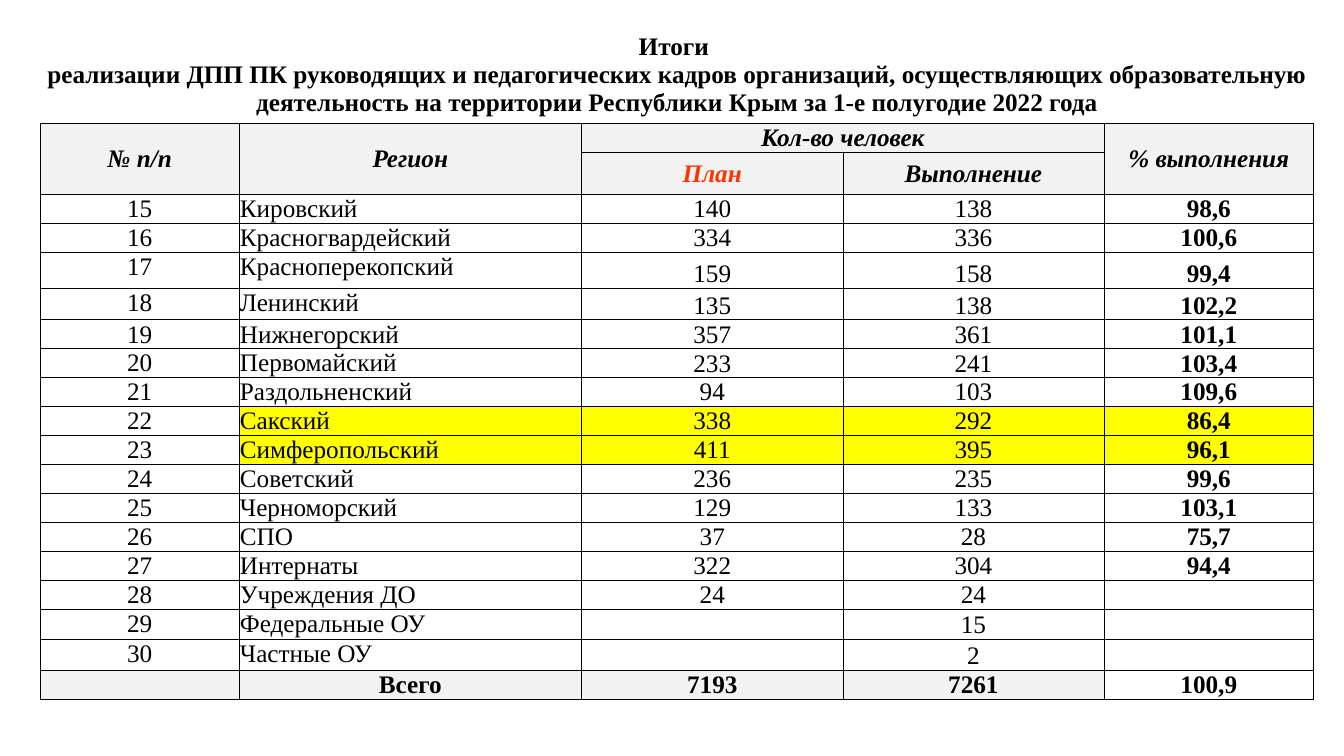
"""Build the slide with the table of training results by region."""
from lxml.etree import SubElement
from pptx import Presentation
from pptx.dml.color import RGBColor
from pptx.enum.text import MSO_ANCHOR, PP_ALIGN
from pptx.oxml.ns import qn
from pptx.util import Inches, Pt

FONT = "Times New Roman"
BLACK, RED, GREY, YELLOW = "000000", "FF3300", "F2F2F2", "FFFF00"
TITLE = (
    "Итоги \vреализации ДПП ПК руководящих и педагогических кадров организаций, "
    "осуществляющих образовательную деятельность на территории Республики Крым "
    "за 1-е полугодие 2022 года"
)
HEADER = [
    ("№ п/п", "Регион", "Кол-во человек", "", "% выполнения"),
    ("", "", "План", "Выполнение", ""),
]
REGIONS = [
    ("Кировский", "140", "138", "98,6"),
    ("Красногвардейский", "334", "336", "100,6"),
    ("Красноперекопский", "159", "158", "99,4"),
    ("Ленинский", "135", "138", "102,2"),
    ("Нижнегорский", "357", "361", "101,1"),
    ("Первомайский", "233", "241", "103,4"),
    ("Раздольненский", "94", "103", "109,6"),
    ("Сакский", "338", "292", "86,4"),
    ("Симферопольский", "411", "395", "96,1"),
    ("Советский", "236", "235", "99,6"),
    ("Черноморский", "129", "133", "103,1"),
    ("СПО", "37", "28", "75,7"),
    ("Интернаты", "322", "304", "94,4"),
    ("Учреждения ДО", "24", "24", ""),
    ("Федеральные ОУ", "", "15", ""),
    ("Частные ОУ", "", "2", ""),
]
TOTAL = ("", "Всего", "7193", "7261", "100,9")
HIGHLIGHTED = ("Сакский", "Симферопольский")
FIRST_NUMBER = 15
COLUMN_WIDTHS = [1.97, 3.4, 2.59, 2.59, 2.08]
ROW_HEIGHT = 0.28
TALL_ROWS = {0: 0.96, 2: 0.42, 5: 0.36, 6: 0.31, 17: 0.3, 18: 0.31}


def color(value):
    return RGBColor.from_string(value)


def set_borders(cell, visible):
    properties = cell._tc.get_or_add_tcPr()
    for side in ("L", "R", "T", "B"):
        line = SubElement(properties, qn(f"a:ln{side}"), w=str(Pt(0.5)))
        if side in visible:
            fill = SubElement(line, qn("a:solidFill"))
            SubElement(fill, qn("a:srgbClr"), val=BLACK)
        else:
            SubElement(line, qn("a:noFill"))


deck = Presentation()
deck.slide_width, deck.slide_height = Inches(13.33), Inches(7.5)
page = deck.slides.add_slide(deck.slide_layouts[6])

rows = [(TITLE, "", "", "", ""), *HEADER]
rows += [(str(number), *region) for number, region in enumerate(REGIONS, FIRST_NUMBER)]
rows.append(TOTAL)
last_row, last_column = len(rows) - 1, len(COLUMN_WIDTHS) - 1
heights = [TALL_ROWS.get(index, ROW_HEIGHT) for index in range(len(rows))]

table = page.shapes.add_table(
    len(rows), len(COLUMN_WIDTHS), Inches(0.4), Inches(0.26),
    Inches(sum(COLUMN_WIDTHS)), Inches(sum(heights)),
).table
table.first_row = table.horz_banding = False
for column, width in zip(table.columns, COLUMN_WIDTHS):
    column.width = Inches(width)
for row, height in zip(table.rows, heights):
    row.height = Inches(height)

for row_index, values in enumerate(rows):
    is_title = row_index == 0
    is_header = row_index in (1, 2)
    is_total = row_index == last_row
    for column_index, value in enumerate(values):
        cell = table.cell(row_index, column_index)
        cell.margin_left = cell.margin_right = cell.margin_top = Inches(0.01)
        cell.margin_bottom = 0
        set_borders(cell, "B" if is_title else "LRTB")

        if is_header or (is_total and column_index < last_column):
            fill_color = GREY
        elif values[1] in HIGHLIGHTED and column_index > 0:
            fill_color = YELLOW
        else:
            fill_color = None
        if fill_color:
            cell.fill.solid()
            cell.fill.fore_color.rgb = color(fill_color)
        else:
            cell.fill.background()

        if is_title or is_header:
            cell.vertical_anchor = MSO_ANCHOR.MIDDLE
        elif is_total or column_index > 1:
            cell.vertical_anchor = MSO_ANCHOR.BOTTOM
        else:
            cell.vertical_anchor = MSO_ANCHOR.TOP

        para = cell.text_frame.paragraphs[0]
        para.text = value
        is_region = column_index == 1 and not (is_header or is_total)
        para.alignment = PP_ALIGN.LEFT if is_region else PP_ALIGN.CENTER
        if not value:
            para._p.get_or_add_endParaRPr().set("sz", "1200")
        for span in para.runs:
            span.font.name = FONT
            span.font.size = Pt(18)
            span.font.bold = is_title or is_header or is_total or column_index == last_column
            span.font.italic = is_header
            span.font.color.rgb = color(RED if value == "План" else BLACK)

table.cell(0, 0).merge(table.cell(0, last_column))
table.cell(1, 2).merge(table.cell(1, 3))
for column_index in (0, 1, last_column):
    table.cell(1, column_index).merge(table.cell(2, column_index))

deck.save("out.pptx")
